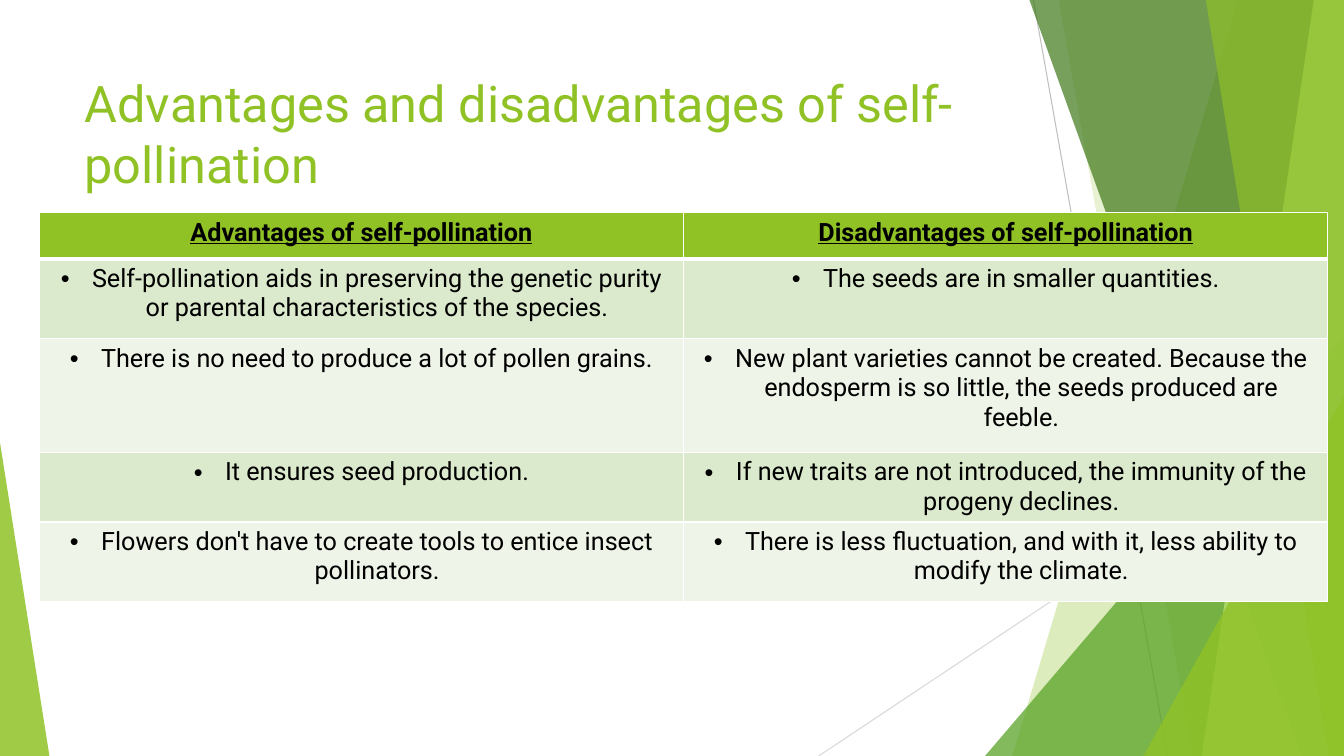
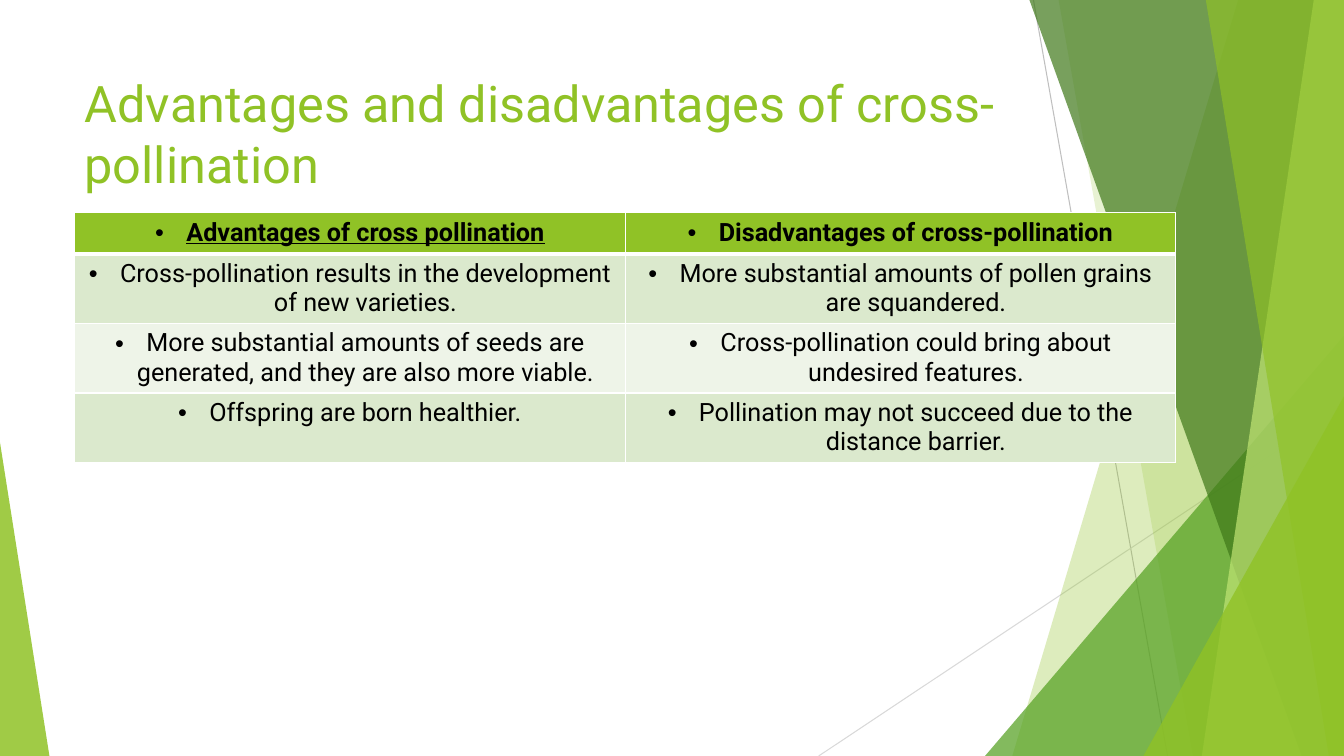
from lxml import etree
from pptx import Presentation
from pptx.dml.color import RGBColor
from pptx.enum import shapes, text
from pptx.oxml.ns import qn
from pptx.util import Inches, Pt

FONT = "Roboto"
GREEN = RGBColor(0x90, 0xC2, 0x26)
MID_GREEN = RGBColor(0x54, 0xA0, 0x21)
DARK_GREEN = RGBColor(0x3F, 0x78, 0x19)
LIME = RGBColor(0xC0, 0xE4, 0x74)
BAND_DARK = RGBColor(0xDB, 0xE9, 0xCD)
BAND_LIGHT = RGBColor(0xEE, 0xF4, 0xE8)
GREY = RGBColor(0xBF, 0xBF, 0xBF)
LIGHT_GREY = RGBColor(0xD9, 0xD9, 0xD9)
WHITE = RGBColor(0xFF, 0xFF, 0xFF)
BLACK = RGBColor(0, 0, 0)
WIDTH, HEIGHT = 13.33, 7.5


def sub(parent, tag, **attrs):
    return etree.SubElement(parent, qn(tag), {k: str(v) for k, v in attrs.items()})


class Deck:
    """Presentation style together with the slide being built."""

    def __init__(self):
        self.prs = Presentation()
        self.prs.slide_width = Inches(WIDTH)
        self.prs.slide_height = Inches(HEIGHT)
        self.s = None

    def slide(self, title):
        self.s = self.prs.slides.add_slide(self.prs.slide_layouts[5])
        self.backdrop()
        self.title(title)

    def backdrop(self):
        self.line((10.25, 0), (11.58, HEIGHT), GREY)
        self.line((WIDTH, 4.03), (8.12, HEIGHT), LIGHT_GREY)
        self.band(12.28, 10.04, GREEN, 30)
        self.band(10.5, 11.83, GREEN, 20)
        self.triangle(9.77, 3.33, 3.56, 1, MID_GREEN, 72)
        self.band(10.21, 12.91, DARK_GREEN, 70)
        self.band(13.03, 11.92, LIME, 70)
        self.band(11.96, 13.18, GREEN, 65)
        self.triangle(11.34, 3.93, 1.99, 1, GREEN, 80)
        self.triangle(0, 4.39, 0.49, 0, GREEN, 85)

    def line(self, start, end, color):
        con = self.s.shapes.add_connector(
            shapes.MSO_CONNECTOR.STRAIGHT, *map(Inches, start + end))
        con.line.color.rgb = color
        con.line.width = Pt(0.75)
        sub(con.element.spPr, "a:effectLst")

    def band(self, top_x, bottom_x, color, opacity):
        """Full-height area from a slanted left edge to the slide's right edge."""
        fb = self.s.shapes.build_freeform(Inches(top_x), 0)
        corners = [(WIDTH, 0), (WIDTH, HEIGHT), (bottom_x, HEIGHT)]
        fb.add_line_segments([(Inches(x), Inches(y)) for x, y in corners])
        self.paint(fb.convert_to_shape(), color, opacity)

    def triangle(self, left, top, width, apex, color, opacity):
        sp = self.s.shapes.add_shape(
            shapes.MSO_SHAPE.ISOSCELES_TRIANGLE, Inches(left), Inches(top),
            Inches(width), Inches(HEIGHT - top))
        sp.adjustments[0] = apex
        self.paint(sp, color, opacity)

    def paint(self, sp, color, opacity):
        sp.shadow.inherit = False
        sp.line.fill.background()
        sp.fill.solid()
        sp.fill.fore_color.rgb = color
        sub(sp.element.spPr.find(".//" + qn("a:srgbClr")), "a:alpha", val=opacity * 1000)

    def run(self, p, content, size, color, bold=False, underline=False):
        r = p.add_run()
        r.text = content
        f = r.font
        f.name, f.size, f.bold, f.underline = FONT, Pt(size), bold, underline
        f.color.rgb = color

    def title(self, content):
        sp = self.s.shapes.title
        sp.left, sp.top, sp.width, sp.height = map(Inches, (0.74, 0.67, 9.4, 1.44))
        self.s.shapes.element.append(sp.element)  # in front of the backdrop
        tf = sp.text_frame
        tf.word_wrap = True
        tf.auto_size = text.MSO_AUTO_SIZE.NONE
        tf.vertical_anchor = text.MSO_ANCHOR.TOP
        p = tf.paragraphs[0]
        p.alignment = text.PP_ALIGN.LEFT
        self.run(p, content, 36, GREEN)

    def table(self, left, col_width, row_heights, headers, rows, underlined, header_bullets):
        top = 2.11
        table = self.s.shapes.add_table(
            len(row_heights), 2, Inches(left), Inches(top),
            Inches(2 * col_width), Inches(sum(row_heights))).table
        for col in table.columns:
            col.width = Inches(col_width)
        for i, (height, row) in enumerate(zip(row_heights, [headers] + rows)):
            table.rows[i].height = Inches(height)
            for j, content in enumerate(row):
                cell = table.cell(i, j)
                self.cell_style(cell, i)
                p = cell.text_frame.paragraphs[0]
                p.alignment = text.PP_ALIGN.CENTER
                header = i == 0
                if header_bullets or not header:
                    self.bullet(p)
                self.run(p, content, 18, BLACK, header, header and underlined[j])

    def cell_style(self, cell, row):
        tc_pr = cell._tc.get_or_add_tcPr()
        thick = {0: "B", 1: "T"}.get(row)
        for side in "LRTB":
            ln = sub(tc_pr, "a:ln" + side, w=Pt(3 if side == thick else 1))
            sub(sub(ln, "a:solidFill"), "a:srgbClr", val=WHITE)
        cell.fill.solid()
        cell.fill.fore_color.rgb = (
            GREEN if row == 0 else BAND_DARK if row % 2 else BAND_LIGHT)

    def bullet(self, p):
        p_pr = p._p.get_or_add_pPr()
        indent = Inches(0.31)
        p_pr.set("marL", str(indent))
        p_pr.set("indent", str(-indent))
        sub(p_pr, "a:buFont", typeface="Arial")
        sub(p_pr, "a:buChar", char="•")


def main():
    deck = Deck()
    deck.slide("Advantages and disadvantages of self-pollination")
    deck.table(
        0.39, 6.39, [0.46, 0.79, 1.13, 0.69, 0.79],
        ("Advantages of self-pollination", "Disadvantages of self-pollination"),
        [("Self-pollination aids in preserving the genetic purity or parental "
          "characteristics of the species.",
          "The seeds are in smaller quantities."),
         ("There is no need to produce a lot of pollen grains.",
          "New plant varieties cannot be created. Because the endosperm is so little, "
          "the seeds produced are feeble."),
         ("It ensures seed production.",
          "If new traits are not introduced, the immunity of the progeny declines."),
         ("Flowers don't have to create tools to entice insect pollinators.",
          "There is less fluctuation, and with it, less ability to modify the climate.")],
        underlined=(True, True), header_bullets=False)

    deck.slide("Advantages and disadvantages of cross-pollination")
    deck.table(
        0.74, 5.46, [0.41, 0.69, 0.69, 0.69],
        ("Advantages of cross pollination", "Disadvantages of cross-pollination"),
        [("Cross-pollination results in the development of new varieties.",
          "More substantial amounts of pollen grains are squandered."),
         ("More substantial amounts of seeds are generated, and they are also more viable.",
          "Cross-pollination could bring about undesired features."),
         ("Offspring are born healthier.",
          "Pollination may not succeed due to the distance barrier.")],
        underlined=(True, False), header_bullets=True)
    deck.prs.save("out.pptx")


if __name__ == "__main__":
    main()
